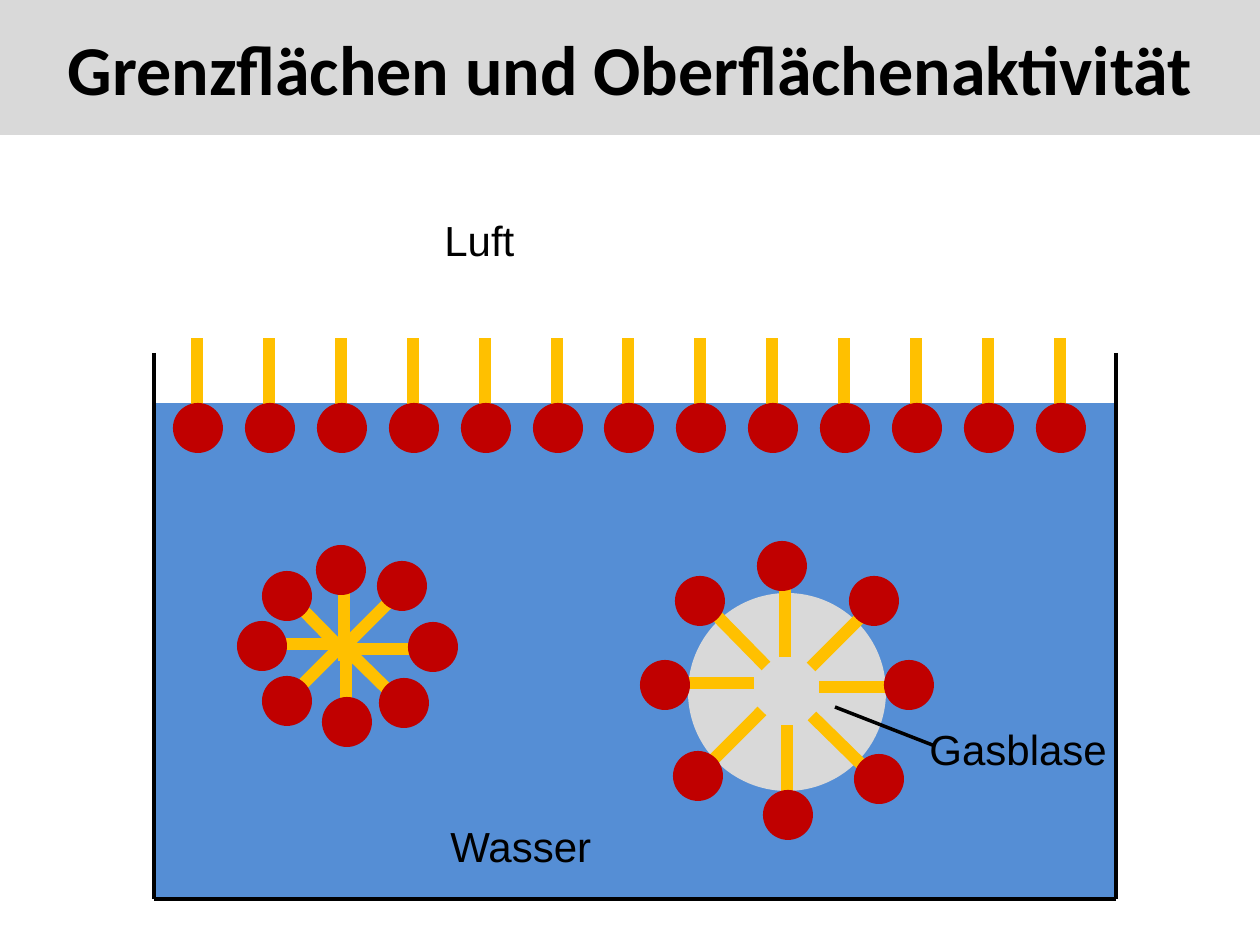
from lxml.etree import SubElement
from pptx import Presentation
from pptx.dml.color import RGBColor
from pptx.enum.shapes import MSO_CONNECTOR, MSO_SHAPE
from pptx.enum.text import MSO_ANCHOR, MSO_AUTO_SIZE, PP_ALIGN
from pptx.oxml.ns import qn
from pptx.util import Inches, Pt

BLACK = RGBColor(0x00, 0x00, 0x00)
GREY = RGBColor(0xD9, 0xD9, 0xD9)
WATER = RGBColor(0x55, 0x8E, 0xD5)
HEAD = RGBColor(0xC0, 0x00, 0x00)
TAIL = RGBColor(0xFF, 0xC0, 0x00)

PX_PER_INCH = 126
HEAD_SIZE = 50

# Per direction: step from tail start to head centre, step to tail end
MOLECULES = {
    "down": ((1, 21), (0, -69)),
    "up": ((-3, -22), (0, 69)),
    "left": ((-20, 2), (69, 0)),
    "right": ((21, -2), (-69, 0)),
    "down_left": ((-15, 16), (49, -49)),
    "up_left": ((-17, -15), (49, 50)),
    "down_right": ((17, 14), (-50, -49)),
    "up_right": ((13, -16), (-50, 50)),
}


def px(length):
    return Inches(length / PX_PER_INCH)


def write(frame, text, size=24, font="Arial", bold=False, color=BLACK,
          align=PP_ALIGN.LEFT):
    paragraph = frame.paragraphs[0]
    paragraph.alignment = align
    run = paragraph.add_run()
    run.text = text
    run.font.size = Pt(size)
    run.font.name = font
    run.font.bold = bold
    run.font.color.rgb = color


class Sketch:
    def __init__(self, slide):
        self.slide = slide
        self.shapes = slide.shapes

    def start_group(self):
        self.shapes = self.slide.shapes.add_group_shape().shapes

    def end_group(self):
        self.shapes = self.slide.shapes

    def title(self, text, left, top, width, height):
        title = self.slide.shapes.title
        title.left, title.top = px(left), px(top)
        title.width, title.height = px(width), px(height)
        title.fill.solid()
        title.fill.fore_color.rgb = GREY
        frame = title.text_frame
        frame.vertical_anchor = MSO_ANCHOR.MIDDLE
        frame.auto_size = MSO_AUTO_SIZE.NONE
        write(frame, text, size=40, font="Calibri", bold=True,
              align=PP_ALIGN.CENTER)

    def area(self, kind, left, top, width, height, color):
        area = self.shapes.add_shape(kind, px(left), px(top), px(width), px(height))
        area.shadow.inherit = False
        area.fill.solid()
        area.fill.fore_color.rgb = color
        area.line.fill.background()

    def line(self, start, end, color=BLACK, weight=2):
        line = self.shapes.add_connector(
            MSO_CONNECTOR.STRAIGHT, *map(px, start), *map(px, end))
        line.line.color.rgb = color
        line.line.width = Pt(weight)
        SubElement(line._element.spPr, qn("a:effectLst"))

    def label(self, text, left, top, width, height=63):
        box = self.shapes.add_textbox(px(left), px(top), px(width), px(height))
        box.text_frame.word_wrap = False
        box.text_frame.auto_size = MSO_AUTO_SIZE.SHAPE_TO_FIT_TEXT
        write(box.text_frame, text)

    def molecule(self, direction, x, y):
        (head_dx, head_dy), (tail_dx, tail_dy) = MOLECULES[direction]
        self.line((x, y), (x + tail_dx, y + tail_dy), TAIL, 7)
        self.area(MSO_SHAPE.OVAL, x + head_dx - HEAD_SIZE // 2,
                  y + head_dy - HEAD_SIZE // 2, HEAD_SIZE, HEAD_SIZE, HEAD)

    def cluster(self, tail_starts):
        self.start_group()
        for direction, (x, y) in zip(MOLECULES, tail_starts):
            self.molecule(direction, x, y)
        self.end_group()


def main():
    deck = Presentation()
    deck.slide_width, deck.slide_height = px(1260), px(945)
    sketch = Sketch(deck.slides.add_slide(deck.slide_layouts[5]))
    sketch.title("Grenzflächen und Oberflächenaktivität", 0, 0, 1260, 135)

    # Water in its open vessel
    left, right, rim, surface, bottom = 154, 1116, 353, 403, 899
    sketch.start_group()
    sketch.area(MSO_SHAPE.RECTANGLE, left, surface, right - left,
                bottom - surface, WATER)
    for wall in (right, left):
        sketch.line((wall, rim), (wall, bottom))
    sketch.line((right, bottom), (left, bottom))
    sketch.end_group()

    # Molecules along the water surface
    sketch.start_group()
    first, last, count = 197, 1060, 13
    for i in range(count):
        x = round(first + i * (last - first) / (count - 1))
        sketch.molecule("down", x, 407)
    sketch.end_group()

    # Gas bubble with its shell
    sketch.area(MSO_SHAPE.OVAL, 688, 593, 198, 198, GREY)
    sketch.cluster([(787, 794), (785, 588), (685, 683), (888, 687),
                    (713, 760), (717, 616), (862, 765), (861, 617)])

    # Labels
    sketch.label("Luft", 432, 208, 96)
    sketch.start_group()
    sketch.label("Gasblase", 917, 717, 205)
    sketch.line((835, 707), (935, 746))
    sketch.end_group()
    sketch.label("Wasser", 438, 814, 168)

    # Micelle
    sketch.cluster([(346, 701), (344, 592), (282, 644), (412, 649),
                    (302, 685), (304, 611), (387, 689), (389, 602)])

    deck.save("out.pptx")


if __name__ == "__main__":
    main()
